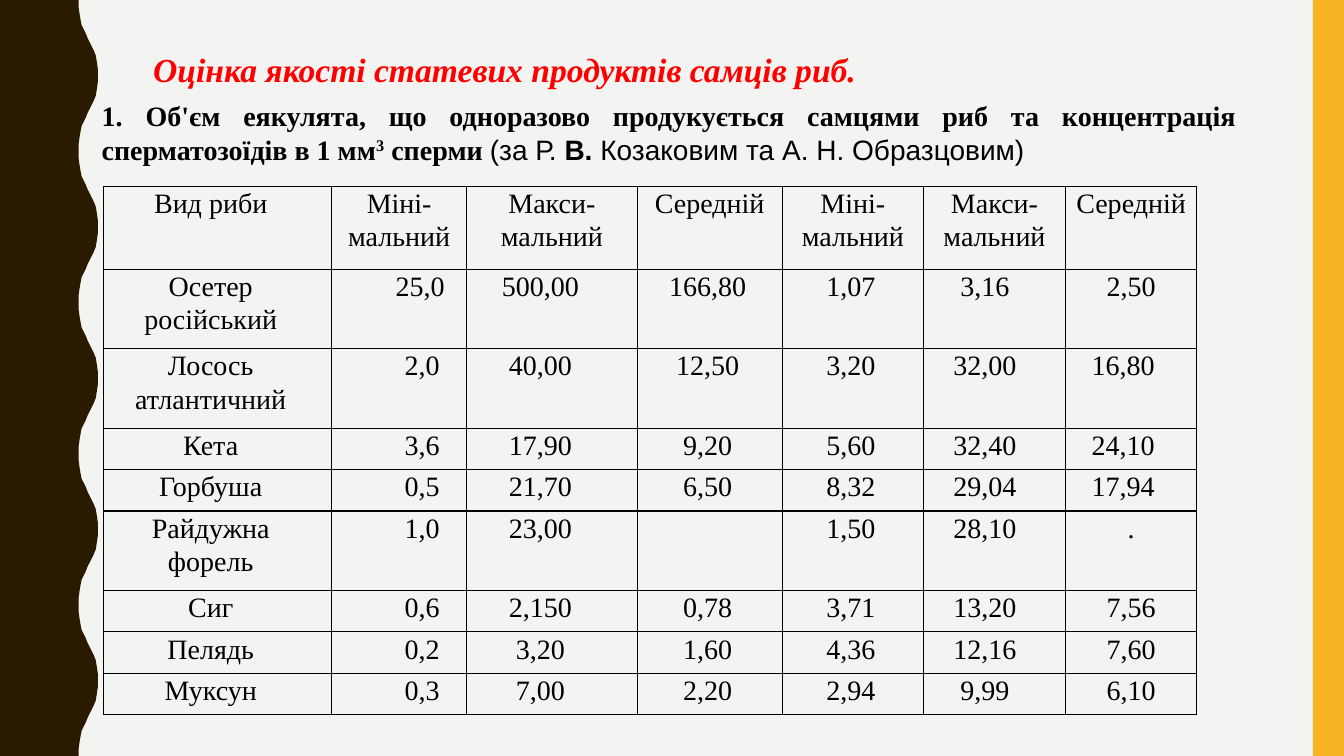
from dataclasses import dataclass
from lxml import etree
from pptx import Presentation
from pptx.dml.color import RGBColor as RGB
from pptx.enum.shapes import MSO_SHAPE as SHAPE
from pptx.enum.text import MSO_AUTO_SIZE as AUTO, PP_ALIGN as ALIGN
from pptx.oxml.ns import qn
from pptx.util import Inches, Pt

COLORS = {"bg": "F3F3F2", "wave": "2A1A00", "stripe": "F8B323",
          "title": "FF0000", "text": "000000"}
SERIF, SANS = "Times New Roman", "Arial"
SLIDE_W, SLIDE_H = 13.33, 7.5
WAVE_PERIOD = 1.5
HALF_WAVE = [(0.78, 0), (0.78, 0.07), (0.79, 0.14), (0.8, 0.2), (0.81, 0.25),
             (0.83, 0.29), (0.85, 0.33), (0.87, 0.38), (0.89, 0.42), (0.91, 0.46),
             (0.93, 0.5), (0.95, 0.55), (0.96, 0.61), (0.97, 0.68), (0.97, 0.75)]


@dataclass
class Run:
    text: str
    size: int = 20
    font: str = SERIF
    color: str = "text"
    bold: bool = False
    italic: bool = False
    raised: bool = False


@dataclass
class TextBox:
    left: float
    top: float
    width: float
    height: float
    runs: list[Run]
    align: ALIGN = ALIGN.LEFT


@dataclass
class Column:
    width: float
    align: ALIGN = ALIGN.CENTER
    inset: float = 0


TEXT_BOXES = [
    TextBox(1.42, 0.44, 10.28, 0.5, [
        Run("Оцінка якості статевих продуктів самців риб.", 24, color="title",
            bold=True, italic=True)]),
    TextBox(0.91, 0.93, 11.45, 1.11, [
        Run("1. Об'єм еякулята, що одноразово продукується самцями риб "
            "та концентрація сперматозоїдів в 1 мм", bold=True),
        Run("3", bold=True, raised=True),
        Run(" сперми ", bold=True),
        Run("(за Р. ", font=SANS),
        Run("В. ", font=SANS, bold=True),
        Run("Козаковим та А. Н. Образцовим)", font=SANS)], ALIGN.JUSTIFY),
]

COLUMNS = [Column(2.26, inset=0.14), Column(1.34, ALIGN.RIGHT, 0.27),
           Column(1.69, inset=0.23), Column(1.44, inset=0.04),
           Column(1.4, inset=0.04), Column(1.41, inset=0.19), Column(1.3)]
WIDE_VALUE_INSET = 0.16
HEADER_H, DOUBLE_H, SINGLE_H = 0.82, 0.79, 0.41
ROWS = [
    ["Вид риби", "Міні-\nмальний", "Макси-\nмальний", "Середній",
     "Міні-\nмальний", "Макси-\nмальний", "Середній"],
    ["Осетер\nросійський", "25,0", "500,00", "166,80", "1,07", "3,16", "2,50"],
    ["Лосось\nатлантичний", "2,0", "40,00", "12,50", "3,20", "32,00", "16,80"],
    ["Кета", "3,6", "17,90", "9,20", "5,60", "32,40", "24,10"],
    ["Горбуша", "0,5", "21,70", "6,50", "8,32", "29,04", "17,94"],
    ["Райдужна\nфорель", "1,0", "23,00", "", "1,50", "28,10", "."],
    ["Сиг", "0,6", "2,150", "0,78", "3,71", "13,20", "7,56"],
    ["Пелядь", "0,2", "3,20", "1,60", "4,36", "12,16", "7,60"],
    ["Муксун", "0,3", "7,00", "2,20", "2,94", "9,99", "6,10"],
]


def rgb(name: str) -> RGB:
    return RGB.from_string(COLORS[name])


def paint(sp, color: str) -> None:
    sp.fill.solid()
    sp.fill.fore_color.rgb = rgb(color)
    sp.line.fill.background()
    sp.shadow.inherit = False


def style_run(r, run: Run) -> None:
    f = r.font
    f.name, f.size = run.font, Pt(run.size)
    f.bold, f.italic = run.bold, run.italic
    f.color.rgb = rgb(run.color)
    if run.raised:
        r._r.get_or_add_rPr().set("baseline", "30000")


def draw_wave(slide) -> None:
    crest = HALF_WAVE + [(x, WAVE_PERIOD - y) for x, y in HALF_WAVE[-2::-1]]
    edge = [(x, y + i * WAVE_PERIOD)
            for i in range(int(SLIDE_H / WAVE_PERIOD)) for x, y in crest]
    outline = [(Inches(x), Inches(y)) for x, y in edge + [(0, SLIDE_H)]]
    builder = slide.shapes.build_freeform(0, 0)
    builder.add_line_segments(outline, close=True)
    paint(builder.convert_to_shape(), "wave")


def draw_text_box(slide, box: TextBox) -> None:
    sp = slide.shapes.add_textbox(*map(Inches, (box.left, box.top, box.width, box.height)))
    tf = sp.text_frame
    tf.word_wrap, tf.auto_size = True, AUTO.NONE
    p = tf.paragraphs[0]
    p.alignment = box.align
    for run in box.runs:
        r = p.add_run()
        r.text = run.text
        style_run(r, run)


def add_borders(cell) -> None:
    tc_pr = cell._tc.get_or_add_tcPr()
    for i, side in enumerate("LRTB"):
        ln = etree.Element(qn(f"a:ln{side}"), w=str(Pt(1)))
        fill = etree.SubElement(ln, qn("a:solidFill"))
        etree.SubElement(fill, qn("a:srgbClr"), val=COLORS["text"])
        tc_pr.insert(i, ln)


def value_inset(text: str, row: int, col: int) -> float:
    if row == 0 and col > 0:
        return 0
    if col == len(COLUMNS) - 1 and len(text) > 4:
        return WIDE_VALUE_INSET
    if col == 1 and len(text) > 3:
        return 0.22
    return COLUMNS[col].inset


def fill_cell(cell, text: str, row: int, col: int) -> None:
    cell.fill.background()
    add_borders(cell)
    cell.margin_left = cell.margin_top = cell.margin_bottom = 0
    cell.margin_right = Inches(value_inset(text, row, col))
    cell.text_frame.text = text
    for p in cell.text_frame.paragraphs:
        p.alignment = COLUMNS[col].align if row else ALIGN.CENTER
        p.line_spacing = 1.07
        for r in p.runs:
            style_run(r, Run(r.text))


def row_height(row: int) -> float:
    if row == 0:
        return HEADER_H
    return DOUBLE_H if "\n" in ROWS[row][0] else SINGLE_H


def draw_table(slide) -> None:
    frame = slide.shapes.add_table(len(ROWS), len(COLUMNS), Inches(1.03), Inches(1.85),
                                   Inches(10.84), Inches(5.24))
    table = frame.table
    table.first_row = table.horz_banding = False
    for i, column in enumerate(COLUMNS):
        table.columns[i].width = Inches(column.width)
    for i, texts in enumerate(ROWS):
        table.rows[i].height = Inches(row_height(i))
        for j, text in enumerate(texts):
            fill_cell(table.cell(i, j), text, i, j)


def main() -> None:
    prs = Presentation()
    prs.slide_width, prs.slide_height = Inches(SLIDE_W), Inches(SLIDE_H)
    slide = prs.slides.add_slide(prs.slide_layouts[6])
    slide.background.fill.solid()
    slide.background.fill.fore_color.rgb = rgb("bg")
    draw_wave(slide)
    stripe = slide.shapes.add_shape(SHAPE.RECTANGLE, Inches(13.02), 0,
                                    Inches(0.31), Inches(SLIDE_H))
    paint(stripe, "stripe")
    for box in TEXT_BOXES:
        draw_text_box(slide, box)
    draw_table(slide)
    prs.save("out.pptx")


if __name__ == "__main__":
    main()
